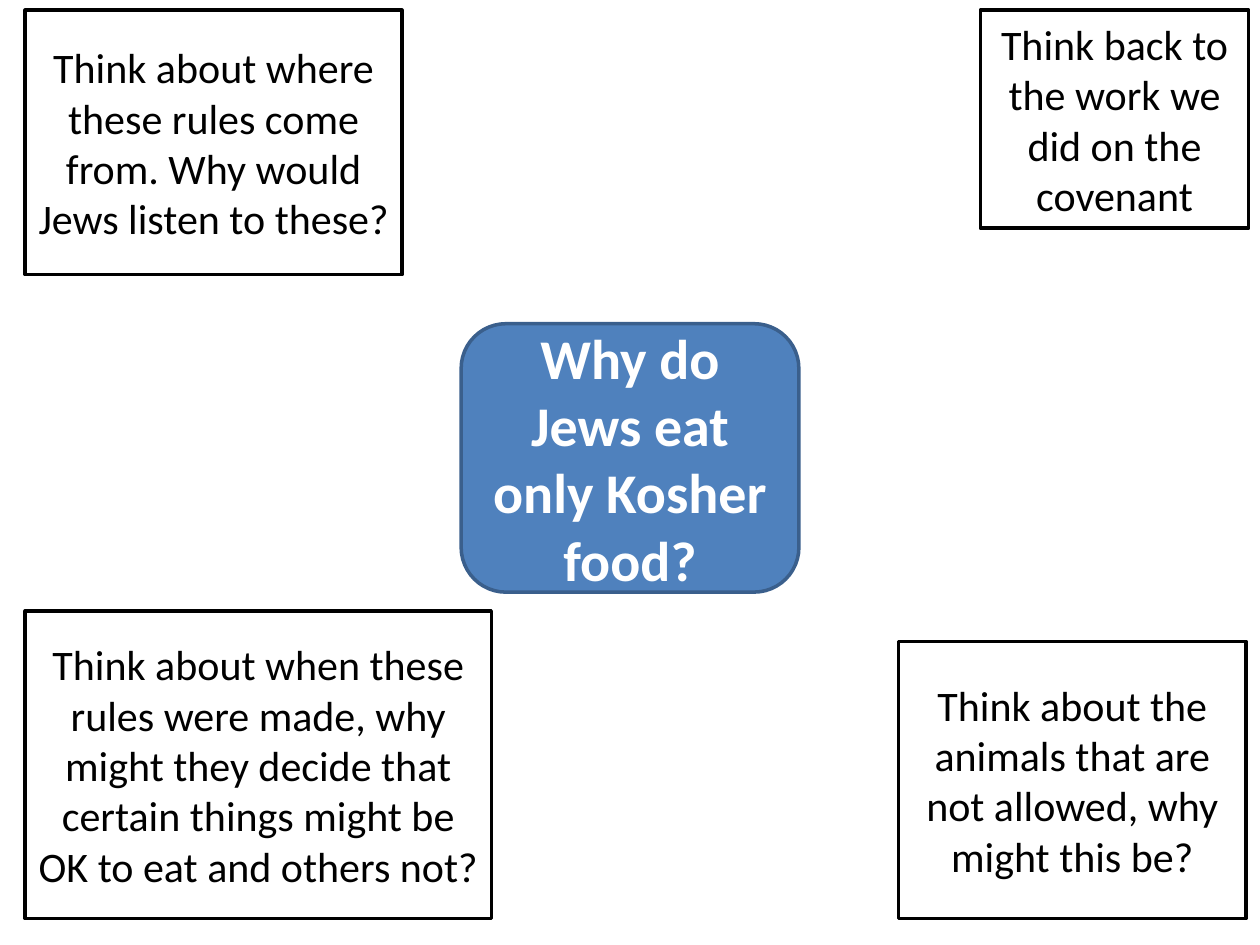
from dataclasses import dataclass

from pptx import Presentation
from pptx.dml.color import RGBColor
from pptx.enum.shapes import MSO_SHAPE
from pptx.enum.text import MSO_ANCHOR, PP_ALIGN
from pptx.util import Pt


@dataclass(frozen=True)
class Theme:
    font: str = "Calibri"
    question_size: int = 32
    prompt_size: int = 24
    line_width: int = 2
    blue: RGBColor = RGBColor(0x4F, 0x81, 0xBD)
    dark_blue: RGBColor = RGBColor(0x3A, 0x5F, 0x8C)
    white: RGBColor = RGBColor(0xFF, 0xFF, 0xFF)
    black: RGBColor = RGBColor(0, 0, 0)


THEME = Theme()

QUESTION = "Why do Jews eat only Kosher food?"
QUESTION_BOX = (263.5, 185, 193, 153.4)

# Each prompt: left, top, width, height in points, then its text
PROMPTS = [
    ((560.2, 5.8, 153.4, 124.6), "Think back to the work we did on the covenant"),
    ((513.4, 366.5, 198.7, 158.4),
     "Think about the animals that are not allowed, why might this be?"),
    ((14.4, 349.2, 266.4, 175.7),
     "Think about when these rules were made, why might they decide that "
     "certain things might be OK to eat and others not?"),
    ((14.4, 5.8, 215.3, 151.2),
     "Think about where these rules come from. Why would Jews listen to these?"),
]


def add_box(slide, kind, box, text, fill, line, color, size, bold=False):
    shape = slide.shapes.add_shape(kind, *(Pt(length) for length in box))
    shape.shadow.inherit = False
    shape.fill.solid()
    shape.fill.fore_color.rgb = fill
    shape.line.color.rgb = line
    shape.line.width = Pt(THEME.line_width)

    text_frame = shape.text_frame
    text_frame.word_wrap = True
    text_frame.vertical_anchor = MSO_ANCHOR.MIDDLE
    text_frame.text = text
    paragraph = text_frame.paragraphs[0]
    paragraph.alignment = PP_ALIGN.CENTER
    font = paragraph.runs[0].font
    font.name = THEME.font
    font.size = Pt(size)
    font.bold = bold
    font.color.rgb = color


def add_question(slide):
    add_box(slide, MSO_SHAPE.ROUNDED_RECTANGLE, QUESTION_BOX, QUESTION,
            THEME.blue, THEME.dark_blue, THEME.white, THEME.question_size, bold=True)


def add_prompt(slide, box, text):
    add_box(slide, MSO_SHAPE.RECTANGLE, box, text,
            THEME.white, THEME.black, THEME.black, THEME.prompt_size)


def main():
    presentation = Presentation()
    presentation.slide_width = Pt(720)
    presentation.slide_height = Pt(540)
    slide = presentation.slides.add_slide(presentation.slide_layouts[6])

    add_question(slide)
    for box, text in PROMPTS:
        add_prompt(slide, box, text)

    presentation.save("out.pptx")


if __name__ == "__main__":
    main()
